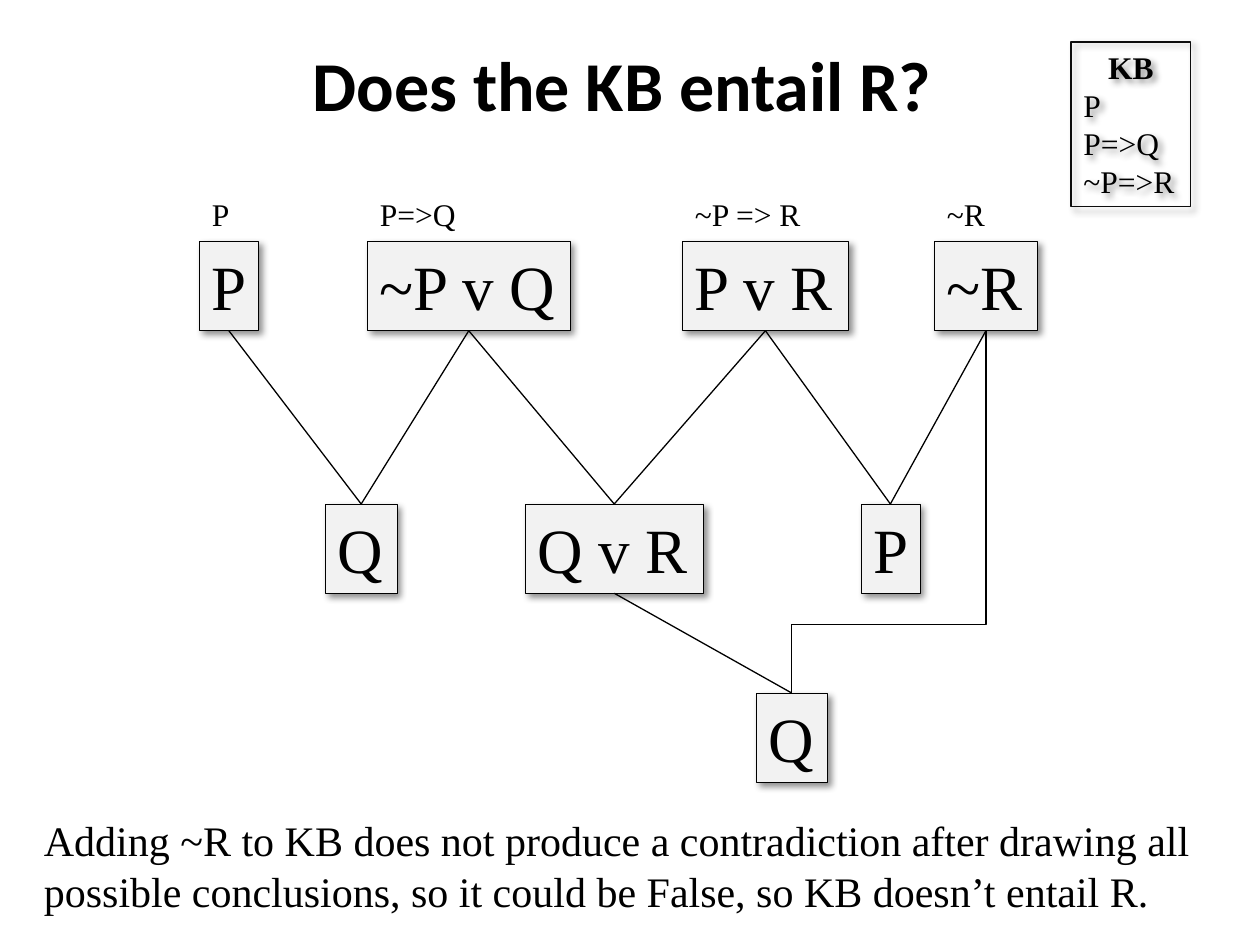
from typing import NamedTuple

from lxml.etree import SubElement
from pptx import Presentation
from pptx.dml.color import RGBColor
from pptx.enum.shapes import MSO_CONNECTOR, MSO_SHAPE
from pptx.enum.text import MSO_ANCHOR, MSO_AUTO_SIZE, PP_ALIGN
from pptx.oxml import parse_xml
from pptx.oxml.ns import nsdecls, qn
from pptx.util import Inches, Pt

BLACK = RGBColor(0x00, 0x00, 0x00)
DARK = RGBColor(0x0D, 0x0D, 0x0D)
PALE = RGBColor(0xF2, 0xF2, 0xF2)
SERIF = "Times New Roman"
ROW1, ROW2, ROW3 = 23, 48, 66
TALL = 8.5
BOTTOM, TOP = 2, 0


class Clause(NamedTuple):
    name: str
    text: str
    col: float
    row: float
    wide: float
    source: str = ""


class Note(NamedTuple):
    text: str
    col: float
    row: float
    wide: float
    high: float
    size: int


CLAUSES = [
    Clause("p", "P", 19, ROW1, 5.6, "P"),
    Clause("pq", "~P v Q", 35, ROW1, 19.3, "P=>Q"),
    Clause("pr", "P v R", 65, ROW1, 15.8, "~P => R"),
    Clause("nr", "~R", 89, ROW1, 9.8, "~R"),
    Clause("q", "Q", 31, ROW2, 6.8),
    Clause("qr", "Q v R", 50, ROW2, 17),
    Clause("p2", "P", 82, ROW2, 5.6),
    Clause("q2", "Q", 72, ROW3, 6.8),
]
# Each parent clause with the clause resolved from it
STEPS = [("p", "q"), ("pq", "q"), ("pq", "qr"), ("pr", "qr"),
         ("pr", "p2"), ("nr", "p2"), ("qr", "q2")]


def unit(num: float) -> int:
    """Length of grid units, twelve to the inch."""
    return Inches(num / 12)


def put(item, **vals) -> None:
    for key, val in vals.items():
        setattr(item, key, val)


def style(run, size: int, bold: bool = False, face: str = SERIF) -> None:
    put(run.font, size=Pt(size), bold=bold, name=face)
    run.font.color.rgb = BLACK


def effects(shape, inner: str = "") -> None:
    shape._element.spPr.append(
        parse_xml(f'<a:effectLst {nsdecls("a")}>{inner}</a:effectLst>'))


def box(slide, col: float, row: float, wide: float, high: float,
        line: RGBColor, weight: float):
    """Outlined rectangle with a soft shadow."""
    rect = slide.shapes.add_shape(MSO_SHAPE.RECTANGLE, *map(unit, (col, row, wide, high)))
    rect.line.color.rgb = line
    rect.line.width = Pt(weight)
    effects(rect, '<a:outerShdw blurRad="50800" dist="38100" dir="2700000" algn="tl" '
                  'rotWithShape="0"><a:srgbClr val="000000"><a:alpha val="43000"/>'
                  '</a:srgbClr></a:outerShdw>')
    put(rect.text_frame, word_wrap=False, vertical_anchor=MSO_ANCHOR.TOP,
        auto_size=MSO_AUTO_SIZE.SHAPE_TO_FIT_TEXT)
    return rect


def line(para, text: str, size: int, bold: bool = False, align=PP_ALIGN.LEFT) -> None:
    para.text = text
    para.alignment = align
    for run in para.runs:
        style(run, size, bold)


def node(slide, item: Clause):
    rect = box(slide, item.col, item.row, item.wide, TALL, BLACK, 0.25)
    rect.fill.solid()
    rect.fill.fore_color.rgb = PALE
    line(rect.text_frame.paragraphs[0], item.text, 36)
    return rect


def label(slide, item: Note) -> None:
    area = slide.shapes.add_textbox(*map(unit, item[1:5]))
    put(area.text_frame, word_wrap=True, auto_size=MSO_AUTO_SIZE.SHAPE_TO_FIT_TEXT)
    line(area.text_frame.paragraphs[0], item.text, item.size)


def join(slide, start, end, kind=MSO_CONNECTOR.STRAIGHT):
    link = slide.shapes.add_connector(kind, 0, 0, 0, 0)
    link.begin_connect(start, BOTTOM)
    link.end_connect(end, TOP)
    link.line.color.rgb = BLACK
    link.line.width = Pt(0.75)
    effects(link)
    return link


def elbow(slide, start, end, share: float) -> None:
    """Bent link that leaves downward, so its frame is turned a quarter."""
    link = join(slide, start, end, MSO_CONNECTOR.ELBOW)
    left, top, wide, high = link.left, link.top, link.width, link.height
    put(link, left=left + (wide - high) // 2, top=top + (high - wide) // 2,
        width=high, height=wide)
    props = link._element.spPr
    frame = props.find(qn("a:xfrm"))
    frame.attrib.pop("flipH", None)
    frame.set("rot", "5400000")
    guides = props.find(qn("a:prstGeom")).find(qn("a:avLst"))
    SubElement(guides, qn("a:gd"), name="adj1", fmla=f"val {round(share * 100000)}")


def main() -> None:
    deck = Presentation()
    put(deck, slide_width=Inches(10), slide_height=Inches(7.5))
    slide = deck.slides.add_slide(deck.slide_layouts[5])

    # Title
    title = slide.shapes.title
    put(title, left=unit(9), top=unit(2), width=unit(102), height=unit(12))
    title.text_frame.vertical_anchor = MSO_ANCHOR.MIDDLE
    para = title.text_frame.paragraphs[0]
    put(para, text="Does the KB entail R? ", alignment=PP_ALIGN.CENTER)
    style(para.runs[0], 40, True, "Calibri")

    # Knowledge base
    base = box(slide, 102, 4, 11.4, 15.7, DARK, 0.75)
    base.fill.background()
    frame = base.text_frame
    line(frame.paragraphs[0], "KB", 18, True, PP_ALIGN.CENTER)
    line(frame.add_paragraph(), "P\vP=>Q\v~P=>R", 18)

    # Clauses and the sentences they come from
    nodes = {item.name: node(slide, item) for item in CLAUSES}
    for item in CLAUSES:
        if item.source:
            label(slide, Note(item.source, item.col, 18, 19, 4.8, 18))

    # Resolution steps
    for start, end in STEPS:
        join(slide, nodes[start], nodes[end])
    elbow(slide, nodes["nr"], nodes["q2"], 0.81)

    # Conclusion
    label(slide, Note("Adding ~R to KB does not produce a contradiction after drawing all "
                      "possible conclusions, so it could be False, so KB doesn’t entail R.",
                      3, 77, 113, 10.9, 24))
    deck.save("out.pptx")


if __name__ == "__main__":
    main()
